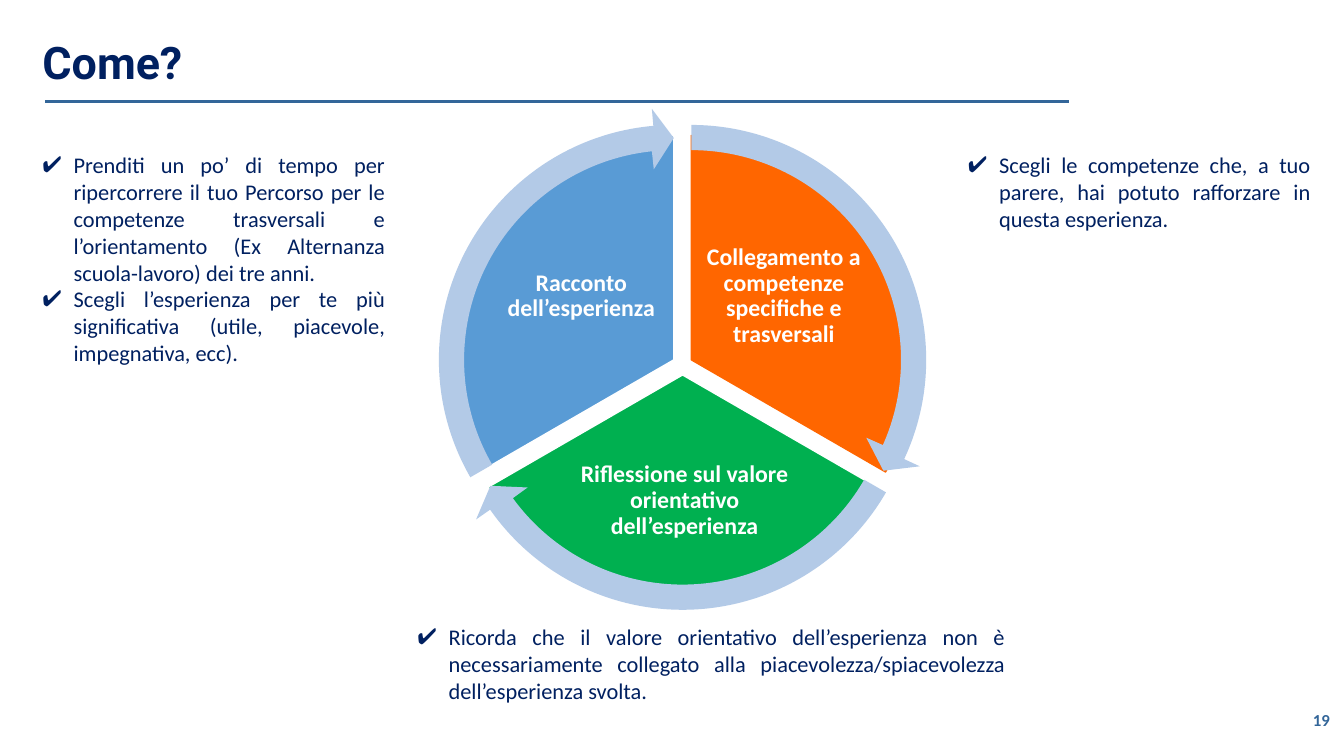
from math import cos, radians, sin, tan

from lxml.etree import SubElement
from pptx import Presentation
from pptx.dml.color import RGBColor
from pptx.enum.shapes import MSO_CONNECTOR as CONNECTOR, MSO_SHAPE as SHAPE
from pptx.enum.text import MSO_ANCHOR as ANCHOR, MSO_AUTO_SIZE as AUTO, PP_ALIGN as ALIGN
from pptx.oxml.ns import qn
from pptx.util import Inches, Pt

NAVY, BLUE, PALE, WHITE = "002060", "336699", "B3CAE7", "FFFFFF"
CHECK = "✔"
INDENT = 0.31
RADIUS, GAP = 2.225, 0.1
RING_OUT, RING_IN = 2.33, 2.08
HEAD_OUT, HEAD_TIP, HEAD_IN = 2.5, 2.2, 1.9
SWEEP, OUTER_SWEEP, INNER_SWEEP = 120, 115, 114

SECTORS = [
    ("Collegamento a competenze specifiche e trasversali", "FF6600", "FF6600",
     270, (0.21, -1.34, 1.59, 1.32)),
    ("Riflessione sul valore orientativo dell’esperienza", "00B050", WHITE,
     30, (-1.17, 0.77, 2.38, 1.16)),
    ("Racconto dell’esperienza", "599BD5", WHITE,
     150, (-1.8, -1.34, 1.59, 1.32)),
]

LISTS = [
    ((0.32, 1.45, 3.6, 2.26), [
        "Prenditi un po’ di tempo per ripercorrere il tuo Percorso per le competenze "
        "trasversali e l’orientamento (Ex Alternanza scuola-lavoro) dei tre anni.",
        "Scegli l’esperienza per te più significativa (utile, piacevole, impegnativa, ecc).",
    ]),
    ((9.5, 1.45, 3.6, 0.91), [
        "Scegli le competenze che, a tuo parere, hai potuto rafforzare in questa esperienza.",
    ]),
    ((4.04, 6.13, 6.03, 0.91), [
        "Ricorda che il valore orientativo dell’esperienza non è necessariamente "
        "collegato alla piacevolezza/spiacevolezza dell’esperienza svolta.",
    ]),
]


def rgb(value):
    return RGBColor.from_string(value)


def assign(target, values):
    for name, value in values.items():
        setattr(target, name, value)


def place(sp, box):
    names = ("left", "top", "width", "height")
    assign(sp, dict(zip(names, map(Inches, box))))


def fill_shape(sp, color):
    sp.shadow.inherit = False
    sp.fill.solid()
    sp.fill.fore_color.rgb = rgb(color)


def set_frame(sp, anchor, inset_x=0.1, inset_y=0.05):
    tf = sp.text_frame
    assign(tf, {
        "word_wrap": True, "auto_size": AUTO.NONE, "vertical_anchor": anchor,
        "margin_left": Inches(inset_x), "margin_right": Inches(inset_x),
        "margin_top": Inches(inset_y), "margin_bottom": Inches(inset_y),
    })
    return tf


def write(p, text, size, color, bold, align, font="Calibri", spacing=1.0):
    assign(p, {"alignment": align, "line_spacing": spacing,
               "space_before": Pt(0), "space_after": Pt(0)})
    r = p.add_run()
    r.text = text
    assign(r.font, {"name": font, "size": Pt(size), "bold": bold})
    r.font.color.rgb = rgb(color)


def add_bullet(p):
    pPr = p._p.get_or_add_pPr()
    pPr.set("marL", str(Inches(INDENT)))
    pPr.set("indent", str(-Inches(INDENT)))
    SubElement(SubElement(pPr, qn("a:buClr")), qn("a:srgbClr")).set("val", NAVY)
    SubElement(pPr, qn("a:buChar")).set("char", CHECK)


def add_header(s, box):
    left, top, width, height = box
    place(s.shapes.title, box)
    tf = set_frame(s.shapes.title, ANCHOR.TOP)
    write(tf.paragraphs[0], "Come?", 32, NAVY, True, ALIGN.LEFT, "Roboto")
    x, y = left + 0.13, top + 0.72
    rule = s.shapes.add_connector(
        CONNECTOR.STRAIGHT, Inches(x), Inches(y), Inches(x + 10.15), Inches(y))
    rule.line.color.rgb = rgb(BLUE)
    rule.line.width = Pt(2.25)
    SubElement(rule._element.spPr, qn("a:effectLst"))


def add_list(sp, box, items):
    place(sp, box)
    tf = set_frame(sp, ANCHOR.TOP)
    for i, item in enumerate(items):
        p = tf.paragraphs[0] if i == 0 else tf.add_paragraph()
        add_bullet(p)
        write(p, item, 16, NAVY, False, ALIGN.JUSTIFY)


def add_sector(s, cx, cy, start, fill, line):
    sp = s.shapes.add_shape(SHAPE.PIE, 0, 0, 0, 0)
    place(sp, (cx - RADIUS, cy - RADIUS, 2 * RADIUS, 2 * RADIUS))
    sp.adjustments[0] = start * 0.6
    sp.adjustments[1] = (start + SWEEP) % 360 * 0.6
    fill_shape(sp, fill)
    sp.line.color.rgb = rgb(line)
    sp.line.width = Pt(1)


def polar(radius, angle):
    a = radians(angle)
    return HEAD_OUT + radius * cos(a), HEAD_OUT + radius * sin(a)


def curve(radius, begin, end):
    a, b = radians(begin), radians(end)
    k = 4 / 3 * tan((b - a) / 4) * radius
    (x1, y1), (x2, y2) = polar(radius, begin), polar(radius, end)
    return [(x1 - k * sin(a), y1 + k * cos(a)), (x2 + k * sin(b), y2 - k * cos(b)), (x2, y2)]


def arc(radius, begin, end):
    middle = (begin + end) / 2
    return [("cubicBezTo", curve(radius, begin, middle)),
            ("cubicBezTo", curve(radius, middle, end))]


def add_arrow(s, cx, cy, start):
    outer, inner, tip = start + OUTER_SWEEP, start + INNER_SWEEP, start + SWEEP
    head = [(HEAD_OUT, outer), (HEAD_TIP, tip), (HEAD_IN, inner), (RING_IN, inner)]
    steps = [("moveTo", [polar(RING_OUT, start)]), *arc(RING_OUT, start, outer),
             *[("lnTo", [polar(*corner)]) for corner in head],
             *arc(RING_IN, inner, start), ("close", [])]
    left, top = Inches(cx - HEAD_OUT), Inches(cy - HEAD_OUT)
    side = Inches(2 * HEAD_OUT)
    builder = s.shapes.build_freeform(left, top)
    builder.add_line_segments([(left + side, top), (left + side, top + side)])
    sp = builder.convert_to_shape()
    outline = sp._element.spPr.find(".//" + qn("a:path"))
    for child in list(outline):
        outline.remove(child)
    for kind, points in steps:
        step = SubElement(outline, qn("a:" + kind))
        for x, y in points:
            pt = SubElement(step, qn("a:pt"))
            pt.set("x", str(Inches(x)))
            pt.set("y", str(Inches(y)))
    fill_shape(sp, PALE)
    sp.line.fill.background()


def add_cycle(s, box):
    left, top, width, height = box
    mx, my = left + width / 2, top + height / 2
    centres = []
    for text, fill, line, start, (dx, dy, w, h) in SECTORS:
        middle = radians(start + SWEEP / 2)
        cx, cy = mx + GAP * cos(middle), my + GAP * sin(middle)
        centres.append((cx, cy, start))
        add_sector(s, cx, cy, start, fill, line)
        label = s.shapes.add_textbox(0, 0, 0, 0)
        place(label, (mx + dx, my + dy, w, h))
        tf = set_frame(label, ANCHOR.MIDDLE, 0.02, 0.02)
        write(tf.paragraphs[0], text, 17, WHITE, True, ALIGN.CENTER, spacing=0.9)
    for centre in centres:
        add_arrow(s, *centre)


def add_page_number(s, box):
    sp = s.shapes.add_textbox(0, 0, 0, 0)
    place(sp, box)
    tf = set_frame(sp, ANCHOR.MIDDLE)
    write(tf.paragraphs[0], "19", 12, BLUE, True, ALIGN.RIGHT)


def main():
    prs = Presentation()
    prs.slide_width, prs.slide_height = Inches(13.33), Inches(7.5)
    s = prs.slides.add_slide(prs.slide_layouts.get_by_name("Comparison"))
    add_header(s, (0.32, 0.29, 12.7, 0.64))
    title, *bodies = list(s.placeholders)
    for sp, (box, items) in zip(bodies, LISTS):
        add_list(sp, box, items)
    for sp in bodies[len(LISTS):]:
        sp._element.getparent().remove(sp._element)
    add_cycle(s, (4.27, 1.12, 5, 5))
    add_page_number(s, (10.29, 6.94, 3, 0.4))
    prs.save("out.pptx")


if __name__ == "__main__":
    main()
